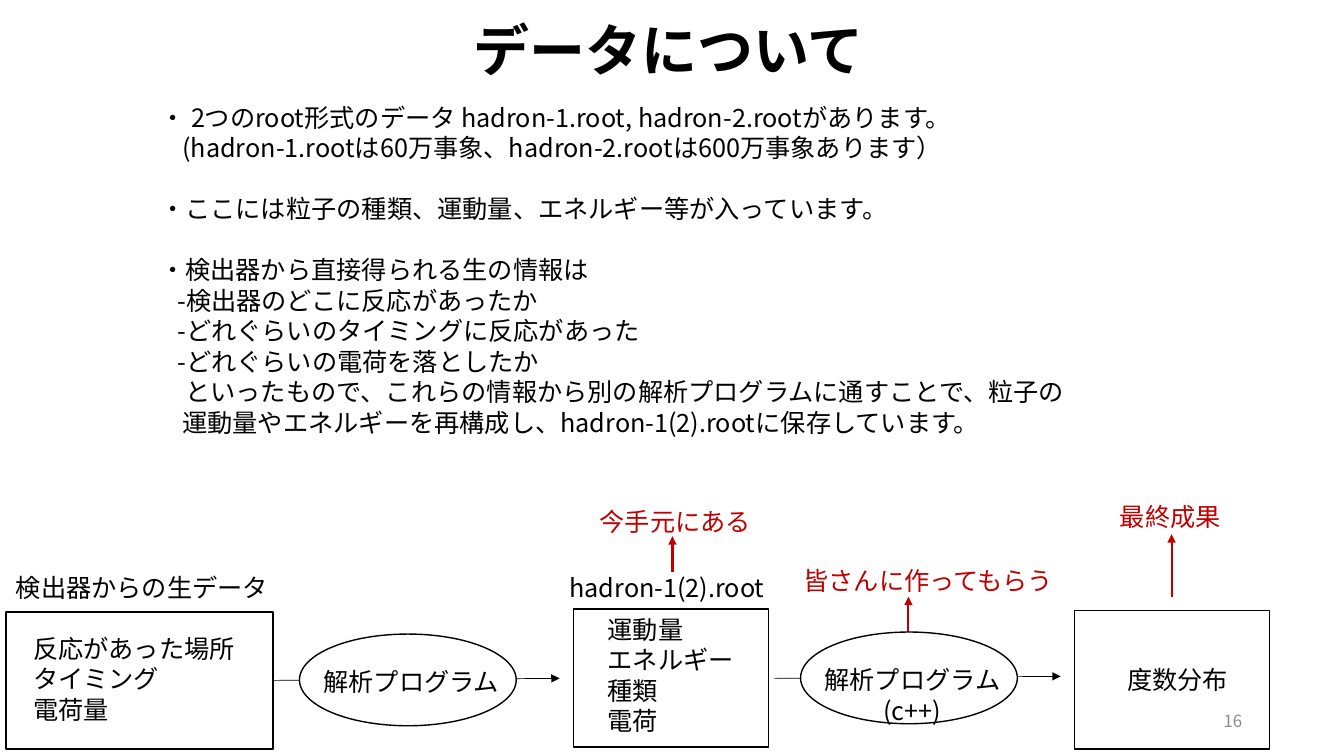
from dataclasses import dataclass

from lxml.etree import SubElement
from pptx import Presentation
from pptx.dml.color import RGBColor
from pptx.enum.shapes import MSO_CONNECTOR, MSO_SHAPE
from pptx.enum.text import MSO_ANCHOR, MSO_AUTO_SIZE, PP_ALIGN
from pptx.oxml.ns import qn
from pptx.shapes.autoshape import Shape
from pptx.shapes.connector import Connector
from pptx.slide import Slide
from pptx.util import Emu, Pt

FONT = "Noto Sans CJK JP"
BLACK = RGBColor(0x00, 0x00, 0x00)
WHITE = RGBColor(0xFF, 0xFF, 0xFF)
RED = RGBColor(0xC0, 0x00, 0x00)
GREY = RGBColor(0x8C, 0x8C, 0x8C)
EMU_PER_PX = 9144
LEADING = 1.21


@dataclass(frozen=True)
class Line:
    text: str
    indent: int = 0
    gap: bool = False
    align: PP_ALIGN = PP_ALIGN.LEFT


@dataclass(frozen=True)
class TextBlock:
    left: int
    top: int
    width: int
    height: int
    lines: tuple[Line, ...]
    size: int = 18
    color: RGBColor = BLACK
    bold: bool = False
    wrap: bool = False
    anchor: MSO_ANCHOR = MSO_ANCHOR.TOP
    grow: bool = True


@dataclass(frozen=True)
class Outline:
    kind: MSO_SHAPE
    left: int
    top: int
    width: int
    height: int


@dataclass(frozen=True)
class Arrow:
    start: tuple[int, int]
    end: tuple[int, int]
    color: RGBColor
    weight: float


RAW_DATA = Outline(MSO_SHAPE.RECTANGLE, 6, 607, 265, 136)
ROOT_FILE = Outline(MSO_SHAPE.RECTANGLE, 569, 604, 193, 137)
HISTOGRAM = Outline(MSO_SHAPE.RECTANGLE, 1066, 606, 193, 137)
PROGRAMS = (
    Outline(MSO_SHAPE.OVAL, 297, 629, 215, 91),
    Outline(MSO_SHAPE.OVAL, 794, 627, 215, 91),
)

RAW_FLOW = Arrow((271, 675), (555, 673), BLACK, 0.5)
ARROWS = (
    Arrow((768, 673), (1052, 671), BLACK, 0.5),
    Arrow((667, 567), (667, 532), RED, 1.5),
    Arrow((901, 627), (901, 592), RED, 1.5),
    Arrow((1162, 592), (1162, 530), RED, 1.5),
)

EXPLANATION = (
    Line("・ 2つのroot形式のデータ hadron-1.root, hadron-2.rootがあります。"),
    Line("(hadron-1.rootは60万事象、hadron-2.rootは600万事象あります）", 22),
    Line("・ここには粒子の種類、運動量、エネルギー等が入っています。", gap=True),
    Line("・検出器から直接得られる生の情報は", gap=True),
    Line("-検出器のどこに反応があったか", 17),
    Line("-どれぐらいのタイミングに反応があった", 17),
    Line("-どれぐらいの電荷を落としたか", 17),
    Line("といったもので、これらの情報から別の解析プログラムに通すことで、粒子の", 25),
    Line("運動量やエネルギーを再構成し、hadron-1(2).rootに保存しています。", 22),
)

TEXTS = (
    TextBlock(942, 695, 300, 40, (Line("16", align=PP_ALIGN.RIGHT),), 12, GREY,
              wrap=True, anchor=MSO_ANCHOR.MIDDLE, grow=False),
    TextBlock(460, 10, 413, 77, (Line("データについて"),), 40, bold=True),
    TextBlock(149, 96, 929, 343, EXPLANATION, wrap=True),
    TextBlock(6, 563, 299, 40, (Line("検出器からの生データ"),), wrap=True),
    TextBlock(23, 623, 222, 101,
              (Line("反応があった場所"), Line("タイミング"), Line("電荷量"))),
    TextBlock(555, 563, 223, 40, (Line("hadron-1(2).root"),), wrap=True),
    TextBlock(311, 656, 197, 40, (Line("解析プログラム"),)),
    TextBlock(593, 604, 146, 131,
              (Line("運動量"), Line("エネルギー"), Line("種類"), Line("電荷"))),
    TextBlock(585, 497, 172, 40, (Line("今手元にある"),), color=RED),
    TextBlock(808, 654, 197, 71,
              (Line("解析プログラム"), Line("(c++)", align=PP_ALIGN.CENTER))),
    TextBlock(787, 556, 273, 40, (Line("皆さんに作ってもらう"),), color=RED),
    TextBlock(1108, 654, 121, 40, (Line("度数分布"),)),
    TextBlock(1101, 492, 121, 40, (Line("最終成果"),), color=RED),
)


def px(value: int) -> Emu:
    return Emu(value * EMU_PER_PX)


def draw_outline(page: Slide, outline: Outline) -> Shape:
    shape = page.shapes.add_shape(outline.kind, px(outline.left), px(outline.top),
                                  px(outline.width), px(outline.height))
    shape.shadow.inherit = False
    if outline.kind == MSO_SHAPE.OVAL:
        shape.fill.solid()
        shape.fill.fore_color.rgb = WHITE
    else:
        shape.fill.background()
    shape.line.color.rgb = BLACK
    shape.line.width = Pt(1)
    return shape


def draw_arrow(page: Slide, arrow: Arrow) -> Connector:
    connector = page.shapes.add_connector(
        MSO_CONNECTOR.STRAIGHT, *map(px, arrow.start), *map(px, arrow.end))
    connector.line.color.rgb = arrow.color
    connector.line.width = Pt(arrow.weight)
    SubElement(connector.line._get_or_add_ln(), qn("a:tailEnd"), type="triangle")
    SubElement(connector._element.spPr, qn("a:effectLst"))
    return connector


def draw_text(page: Slide, block: TextBlock) -> None:
    box = page.shapes.add_textbox(px(block.left), px(block.top),
                                  px(block.width), px(block.height))
    frame = box.text_frame
    frame.word_wrap = block.wrap
    frame.auto_size = (MSO_AUTO_SIZE.SHAPE_TO_FIT_TEXT if block.grow
                       else MSO_AUTO_SIZE.NONE)
    frame.vertical_anchor = block.anchor
    leading = Pt(round(block.size * LEADING, 1))
    for index, line in enumerate(block.lines):
        para = frame.paragraphs[0] if index == 0 else frame.add_paragraph()
        para.text = line.text
        para.alignment = line.align
        para.line_spacing = leading
        if line.gap:
            para.space_before = leading
        properties = para._p.get_or_add_pPr()
        if line.indent:
            properties.set("marL", str(px(line.indent)))
        para.font.name = FONT
        para.font.size = Pt(block.size)
        para.font.bold = block.bold
        para.font.color.rgb = block.color
        SubElement(properties.find(qn("a:defRPr")), qn("a:ea"), typeface=FONT)


def main() -> None:
    deck = Presentation()
    deck.slide_width = px(1333)
    deck.slide_height = px(750)
    page = deck.slides.add_slide(deck.slide_layouts[6])
    raw_data = draw_outline(page, RAW_DATA)
    draw_outline(page, ROOT_FILE)
    draw_outline(page, HISTOGRAM)
    draw_arrow(page, RAW_FLOW).begin_connect(raw_data, 3)
    for arrow in ARROWS:
        draw_arrow(page, arrow)
    for program in PROGRAMS:
        draw_outline(page, program)
    for block in TEXTS:
        draw_text(page, block)
    deck.save("out.pptx")


if __name__ == "__main__":
    main()
